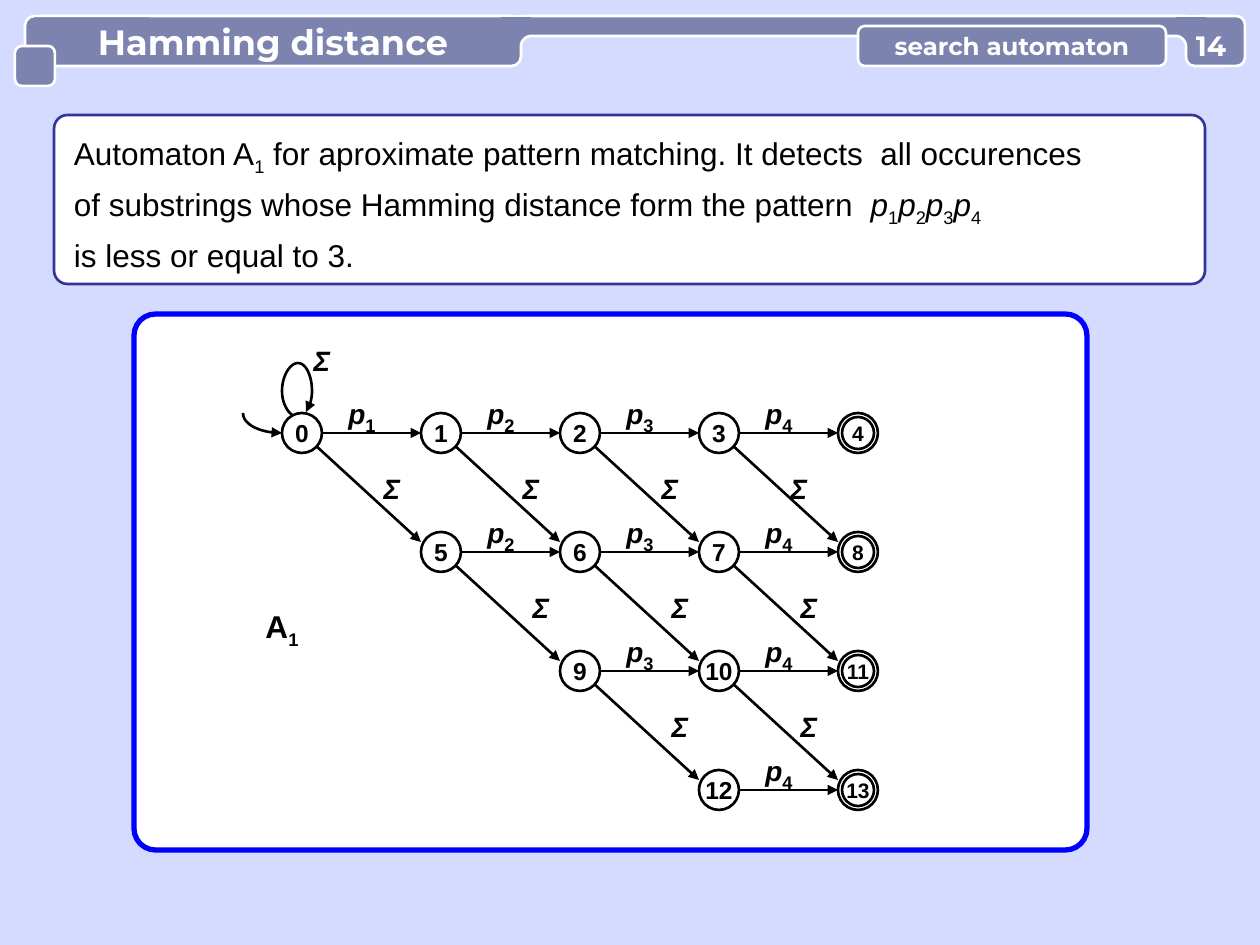
import pptx
import pptx.dml.color
import pptx.enum.shapes
import pptx.enum.text
import pptx.oxml.ns
import pptx.util
import lxml.etree

SHAPE = pptx.enum.shapes.MSO_SHAPE
ALIGN = pptx.enum.text.PP_ALIGN
ANCHOR = pptx.enum.text.MSO_ANCHOR
Pt = pptx.util.Pt
qn = pptx.oxml.ns.qn
PX = 914400 / 126

# Content: each span is (text, style)
TITLE = "Hamming distance"
TOPIC = "search automaton"
NUMBER = "14"
PATTERN = [span for i in "1234" for span in (("p", "italic"), (i, "sub"))]
STATEMENT = [
    [("Automaton A", ""), ("1", "sub"),
     (" for aproximate pattern matching. It detects  all occurences", "")],
    [("of substrings whose Hamming distance form the pattern  ", ""), *PATTERN],
    [("is less or equal to 3.", "")],
]
AUTOMATON = [("A", ""), ("1", "sub")]
SIGMA = [("Σ", "italic")]
PATTERN_LENGTH, MAX_ERRORS = 4, 3

THEME = {
    "background": "D5DAFF", "bar": "7D83AF", "white": "FFFFFF", "ink": "000000",
    "statement": "333399", "panel": "0000FF",
    "body_font": "Arial", "head_font": "Montserrat",
    "title": 20, "topic": 14, "number": 16, "body": 18,
    "label": 16, "index": 18, "state": 14, "final": 12,
    "line": 1.5, "panel_line": 3,
}

# Automaton grid and curves, px
LEFT, TOP, COLUMN, ROW, RADIUS = 302, 433, 139, 119, 20
LOOP = [(298, 417), (290, 417), (282, 405), (282, 391), (282, 376), (290, 363), (298, 363),
        (306, 363), (312, 376), (312, 391), (312, 398), (310, 407), (306, 412)]
ENTRY = [(243, 413), (243, 425), (261, 433), (282, 433)]

deck = pptx.Presentation()
deck.slide_width, deck.slide_height = round(1260 * PX), round(945 * PX)
page = deck.slides.add_slide(deck.slide_layouts[5])


def emu(*lengths):
    return [round(length * PX) for length in lengths]


def color(name):
    return pptx.dml.color.RGBColor.from_string(THEME[name])


def paint(fill, name):
    if name:
        fill.solid()
        fill.fore_color.rgb = color(name)
    else:
        fill.background()


def stroke(shape, name, width="line", arrow=False):
    paint(shape.line.fill, name)
    if name:
        shape.line.width = Pt(THEME[width])
    if arrow:
        outline = shape._element.spPr.find(qn("a:ln"))
        lxml.etree.SubElement(outline, qn("a:tailEnd"), type="triangle")


def block(kind, x, y, w, h, fill, line=None, width="line", corner=None):
    shape = page.shapes.add_shape(kind, *emu(x, y, w, h))
    if corner is not None:
        shape.adjustments[0] = corner
    shape.shadow.inherit = False
    paint(shape.fill, fill)
    stroke(shape, line, width)
    return shape


def write(shape, lines, size, ink="ink", font="body_font", bold=True, align=ALIGN.CENTER,
          wrap=False, margin=0, anchor=ANCHOR.MIDDLE, spacing=1, index=None):
    frame = shape.text_frame
    frame.word_wrap = wrap
    frame.vertical_anchor = anchor
    frame.margin_left = frame.margin_right = round(margin * PX)
    frame.margin_top = frame.margin_bottom = 0
    for number, spans in enumerate(lines):
        para = frame.add_paragraph() if number else frame.paragraphs[0]
        para.alignment, para.line_spacing = align, spacing
        para.font.name, para.font.size, para.font.bold = THEME[font], Pt(THEME[size]), bold
        para.font.color.rgb = color(ink)
        for text, style in spans:
            span = para.add_run()
            span.text = text
            if style == "italic":
                span.font.italic = True
            elif style == "sub":
                span._r.get_or_add_rPr().set("baseline", "-25000")
                if index:
                    span.font.size = Pt(THEME[index])


def text_box(x, y, w, h, lines, size, **options):
    box = page.shapes.add_textbox(*emu(x, y, w, h))
    write(box, lines, size, **options)


def arrow_line(start, end, ink="ink", arrow=True):
    line = page.shapes.add_connector(
        pptx.enum.shapes.MSO_CONNECTOR.STRAIGHT, *emu(*start, *end))
    stroke(line, ink, arrow=arrow)
    lxml.etree.SubElement(line._element.spPr, qn("a:effectLst"))


def bezier(knots, steps=12):
    points = [knots[0]]
    for first in range(0, len(knots) - 1, 3):
        for step in range(1, steps + 1):
            t = step / steps
            weights = ((1 - t) ** 3, 3 * t * (1 - t) ** 2, 3 * t * t * (1 - t), t ** 3)
            points.append(tuple(sum(w * knot[axis] for w, knot in
                                    zip(weights, knots[first:first + 4])) for axis in (0, 1)))
    return points


def outline(points, fill=None, ink=None, arrow=False, close=False):
    points = [tuple(emu(*point)) for point in points]
    builder = page.shapes.build_freeform(*points[0], scale=1.0)
    builder.add_line_segments(points[1:], close=close)
    shape = builder.convert_to_shape()
    shape.shadow.inherit = False
    paint(shape.fill, fill)
    stroke(shape, ink, arrow=arrow)


def fillet(x, side):
    """Round the joint of bar and tab; side is -1 for the left tab, 1 for the right."""
    block(SHAPE.RECTANGLE, min(x, x + 30 * side) + (10 if side < 0 else -10) * 0,
          16, 30, 30, "bar")
    arrow_line((x, 16), (x + 30 * side, 16), "white", arrow=False)
    arc = bezier([(x, 36), (x + 5 * side, 36), (x + 10 * side, 41), (x + 10 * side, 46)])
    outline(arc + [(x, 46)], fill="background", close=True)
    outline(arc, ink="white")


def center(row, column):
    return LEFT + COLUMN * column, TOP + ROW * row


paint(page.background.fill, "background")

# Statement and automaton panel
statement = block(SHAPE.ROUNDED_RECTANGLE, 54, 115, 1151, 169, "white", "statement",
                  corner=0.08)
write(statement, STATEMENT, "body", bold=False, align=ALIGN.LEFT, wrap=True, margin=16,
      spacing=1.2)
block(SHAPE.ROUNDED_RECTANGLE, 134, 314, 953, 536, "white", "panel", "panel_line", 0.04)
text_box(252, 607, 60, 44, [AUTOMATON], "body", anchor=ANCHOR.TOP)

# Header
for x, y, w, h, corner in [(25, 16, 496, 50, 0.19), (512, 16, 684, 20, 0.5)]:
    block(SHAPE.ROUNDED_RECTANGLE, x, y, w, h, "bar", "white", corner=corner)
fillet(531, -1)
for x, y, w, h in [(15, 46, 40, 40), (1186, 16, 59, 50)]:
    block(SHAPE.ROUNDED_RECTANGLE, x, y, w, h, "bar", "white", corner=0.17)
fillet(1176, 1)
topic = block(SHAPE.ROUNDED_RECTANGLE, 858, 26, 308, 40, "bar", "white", corner=0.17)
heading = {"ink": "white", "font": "head_font"}
write(topic, [[(TOPIC, "")]], "topic", **heading)
text_box(1186, 28, 50, 34, [[(NUMBER, "")]], "number", **heading)
title = page.shapes.title
title.left, title.top, title.width, title.height = emu(25, 16, 496, 50)
write(title, [[(TITLE, "")]], "title", **heading)
page.shapes._spTree.append(title._element)

# States: row counts errors, column counts characters read
states = [(row, column) for row in range(MAX_ERRORS + 1)
          for column in range(row, PATTERN_LENGTH + 1)]

# Transitions
text_box(LEFT, 344, 40, 40, [SIGMA], "label", anchor=ANCHOR.TOP)
outline(bezier(LOOP), ink="ink", arrow=True)
outline(bezier(ENTRY), ink="ink", arrow=True)
for row, column in states:
    if column == PATTERN_LENGTH:
        continue
    x, y = center(row, column)
    match = [("p", "italic"), (str(column + 1), "sub")]
    text_box(x + 40, y - 40, 40, 40, [match], "label", anchor=ANCHOR.TOP, index="index")
    arrow_line((x + RADIUS, y), (x + COLUMN - RADIUS, y))
    if row < MAX_ERRORS:
        shift = 70 + 10 * (row > 0) - 10 * (column == PATTERN_LENGTH - 1)
        text_box(x + shift, y + 39, 40, 40, [SIGMA], "label", anchor=ANCHOR.TOP)
        arrow_line((x, y), (x + COLUMN - RADIUS, y + ROW - RADIUS // 2))

for number, (row, column) in enumerate(states):
    x, y = center(row, column)
    final = column == PATTERN_LENGTH
    for radius in (RADIUS, RADIUS - 4) if final else (RADIUS,):
        state = block(SHAPE.OVAL, x - radius, y - radius, 2 * radius, 2 * radius,
                      "white", "ink")
    write(state, [[(str(number), "")]], "final" if final else "state")

deck.save("out.pptx")
